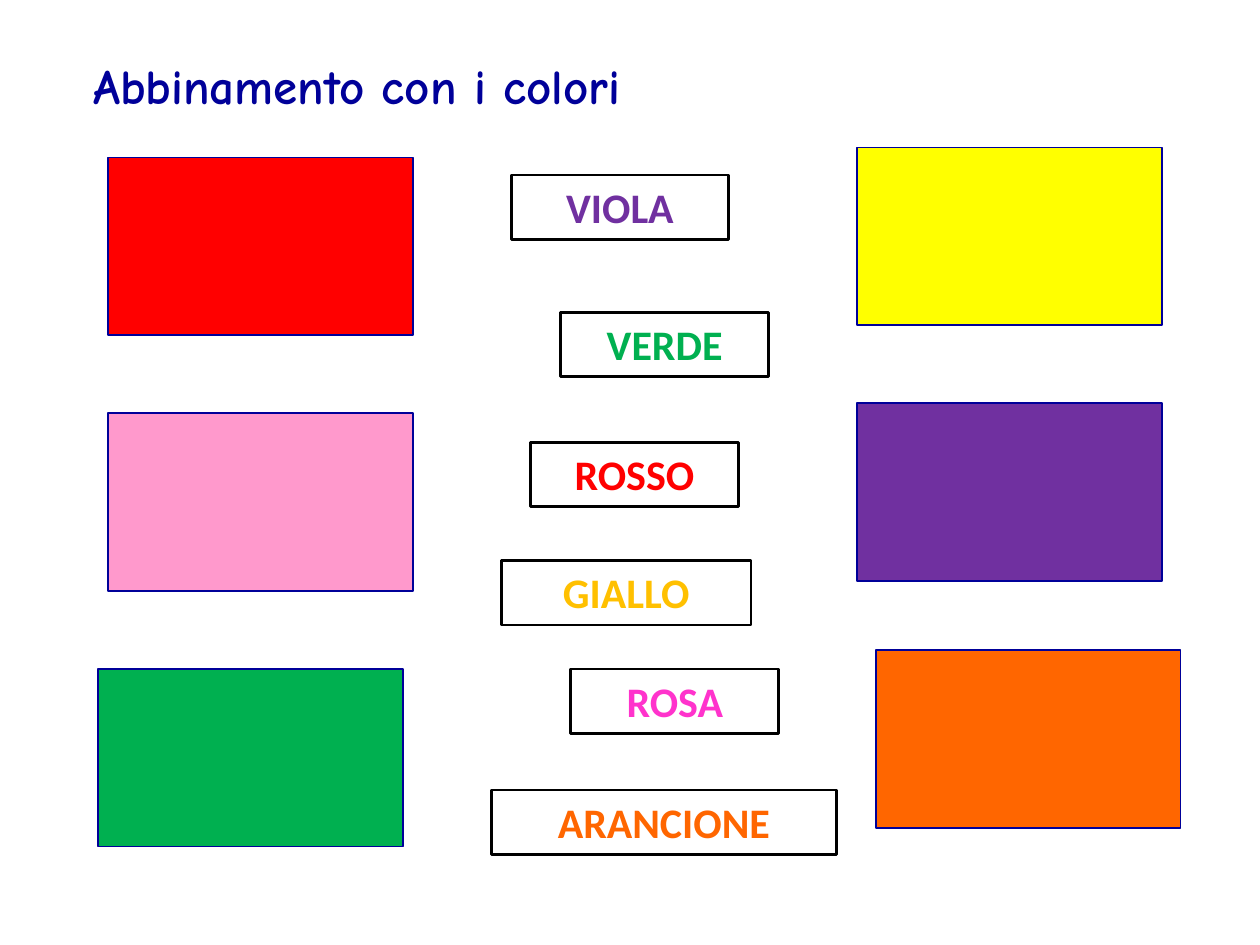
"""Build a colour matching exercise slide in Italian."""
import pptx
import pptx.util
import pptx.dml.color
import pptx.enum.shapes
import pptx.enum.text

Inches = pptx.util.Inches


def colour(value):
    return pptx.dml.color.RGBColor.from_string(value)


def add_rectangle(page, left, top, width, height, fill, line, weight):
    box = page.shapes.add_shape(
        pptx.enum.shapes.MSO_SHAPE.RECTANGLE,
        Inches(left), Inches(top), Inches(width), Inches(height))
    box.shadow.inherit = False
    box.fill.solid()
    box.fill.fore_color.rgb = colour(fill)
    box.line.color.rgb = colour(line)
    box.line.width = pptx.util.Pt(weight)
    return box


deck = pptx.Presentation()
deck.slide_width = Inches(10)
deck.slide_height = Inches(7.5)
page = deck.slides.add_slide(deck.slide_layouts[6])

swatches = [
    (0.86, 1.25, "FF0000"),
    (0.86, 3.28, "FF99CC"),
    (0.78, 5.31, "00B050"),
    (6.8, 1.17, "FFFF00"),
    (6.8, 3.2, "7030A0"),
    (6.95, 5.16, "FF6600"),
]
for left, top, fill in swatches:
    add_rectangle(page, left, top, 2.42, 1.41, fill, "000099", 1)

words = [
    ("VIOLA", 4.06, 1.39, 1.72, "7030A0"),
    ("VERDE", 4.45, 2.48, 1.65, "00B050"),
    ("ROSSO", 4.21, 3.51, 1.65, "FF0000"),
    ("GIALLO", 3.98, 4.45, 1.98, "FFC000"),
    ("ROSA", 4.53, 5.31, 1.65, "FF33CC"),
    ("ARANCIONE", 3.9, 6.27, 2.74, "FF6600"),
]
labels = []
for word, left, top, width, ink in words:
    box = add_rectangle(page, left, top, width, 0.51, "FFFFFF", "000000", 1.5)
    labels.append((box, word, "Calibri", 24, ink))

title = page.shapes.add_textbox(Inches(0.39), Inches(0.39), Inches(4.88), Inches(0.57))
labels.append((title, "Abbinamento con i colori", "Comic Neue", 28, "000099"))

for box, text, font, size, ink in labels:
    frame = box.text_frame
    frame.word_wrap = True
    frame.vertical_anchor = pptx.enum.text.MSO_ANCHOR.TOP
    frame.auto_size = pptx.enum.text.MSO_AUTO_SIZE.SHAPE_TO_FIT_TEXT
    para = frame.paragraphs[0]
    para.text = text
    para.alignment = pptx.enum.text.PP_ALIGN.CENTER
    para.font.name = font
    para.font.size = pptx.util.Pt(size)
    para.font.bold = True
    para.font.color.rgb = colour(ink)

deck.save("out.pptx")
